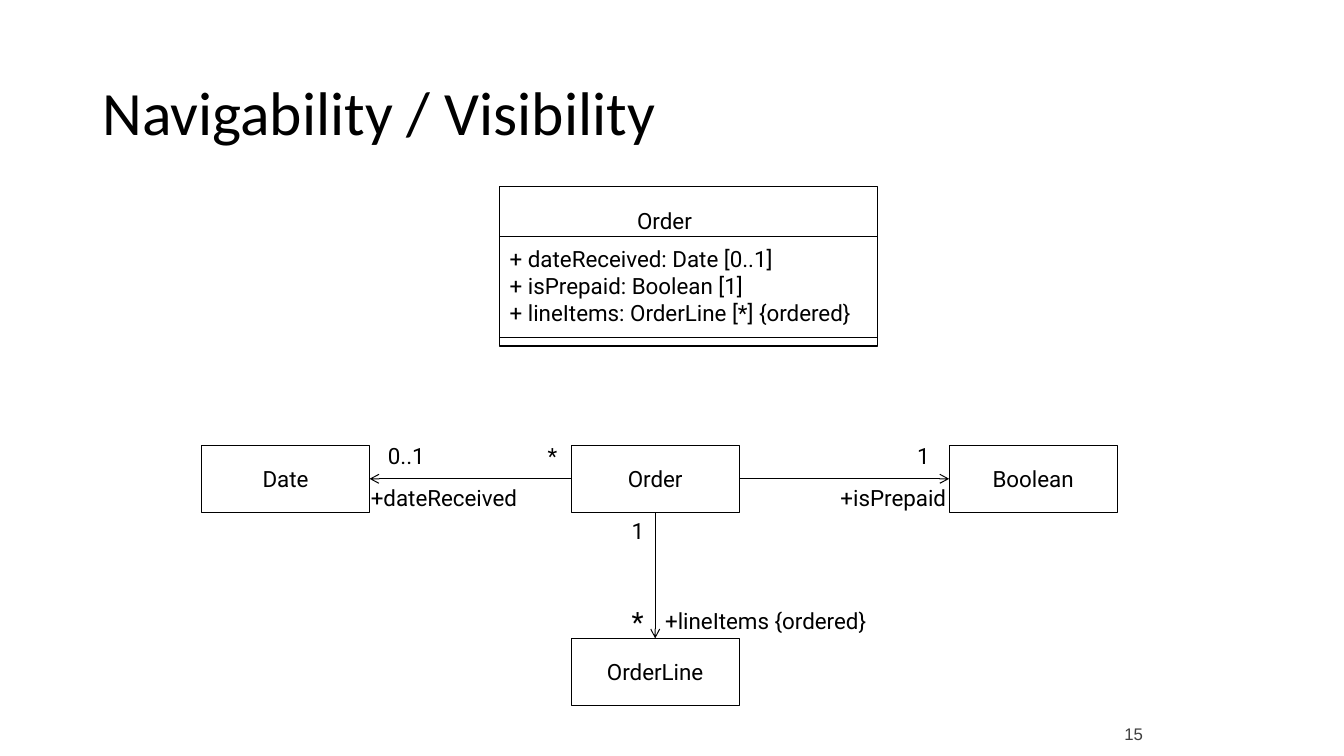
from lxml.etree import SubElement as Sub
from pptx import Presentation
from pptx.dml.color import RGBColor as Rgb
from pptx.enum.shapes import MSO_CONNECTOR as Conn, MSO_SHAPE as Kind
from pptx.enum.text import MSO_ANCHOR as Anchor, MSO_AUTO_SIZE as Fit, PP_ALIGN as Align
from pptx.oxml.ns import qn
from pptx.util import Pt

COLORS = {"ink": "000000", "page": "3F3F3F"}
TOP, LEFT, BOTTOM, RIGHT = range(4)


def style(para, size=16, face="Roboto", color="ink", align=Align.LEFT):
    para.alignment = align
    para.font.size = Pt(size)
    para.font.name = face
    para.font.color.rgb = Rgb.from_string(COLORS[color])


def ink(line):
    line.color.rgb = Rgb.from_string(COLORS["ink"])
    line.width = Pt(0.75)


def add_title(slide, text):
    title = slide.shapes.title
    title.left, title.top, title.width, title.height = Pt(66), Pt(28.8), Pt(828), Pt(108)
    frame = title.text_frame
    frame.text = text
    frame.auto_size = Fit.NONE
    frame.vertical_anchor = Anchor.MIDDLE
    para = frame.paragraphs[0]
    para.line_spacing = 0.9
    style(para, 44, "Calibri")


def add_box(slide, x, y, text, w=120, h=48, align=Align.CENTER):
    box = slide.shapes.add_shape(Kind.RECTANGLE, Pt(x), Pt(y), Pt(w), Pt(h))
    box.shadow.inherit = False
    box.fill.background()
    ink(box.line)
    frame = box.text_frame
    frame.text = text
    frame.word_wrap = True
    frame.vertical_anchor = Anchor.MIDDLE
    for para in frame.paragraphs:
        style(para, align=align)
    return box


def add_line(slide, x1, y1, x2, y2):
    line = slide.shapes.add_connector(Conn.STRAIGHT, Pt(x1), Pt(y1), Pt(x2), Pt(y2))
    ink(line.line)
    Sub(line._element.spPr, qn("a:effectLst"))
    return line


def add_arrow(slide, start, side, end, into):
    line = add_line(slide, 0, 0, 0, 0)
    line.begin_connect(start, side)
    line.end_connect(end, into)
    Sub(line.line._get_or_add_ln(), qn("a:tailEnd"), type="arrow")


def add_label(slide, x, y, w, h, text, **look):
    label = slide.shapes.add_textbox(Pt(x), Pt(y), Pt(w), Pt(h))
    frame = label.text_frame
    frame.text = text
    frame.word_wrap = False
    style(frame.paragraphs[0], **look)
    return frame


def add_class(slide):
    x, y, w = 357, 133.2, 270
    rows = ["Order", "+ dateReceived: Date [0..1]", "+ isPrepaid: Boolean [1]",
            "+ lineItems: OrderLine [*] {ordered}"]
    box = add_box(slide, x, y, "\n".join(rows), w, 114, Align.LEFT)
    name, first = box.text_frame.paragraphs[:2]
    name._p.get_or_add_pPr().set("marL", str(Pt(91)))
    first.space_before = Pt(8)
    for rule in (169.2, 241.2):
        add_line(slide, x, rule, x + w, rule)


def add_links(slide):
    order = add_box(slide, 408, 318, "Order")
    date = add_box(slide, 144, 318, "Date")
    flag = add_box(slide, 678, 318, "Boolean")
    item = add_box(slide, 408, 456, "OrderLine")
    add_arrow(slide, order, LEFT, date, RIGHT)
    add_arrow(slide, order, BOTTOM, item, TOP)
    add_arrow(slide, order, RIGHT, flag, LEFT)

    # Role names and multiplicities
    for x, y, w, text in [
        (593.3, 342, 90.7, "+isPrepaid"),
        (257.8, 342, 121.7, "+dateReceived"),
        (468, 429.8, 159.8, "+lineItems {ordered}"),
        (648, 312, 23, "1"),
        (270, 312, 41, "0..1"),
        (384, 312, 20.9, "*"),
        (444, 366, 23, "1"),
    ]:
        add_label(slide, x, y, w, 26.6, text)
    add_label(slide, 444, 428.4, 22.3, 31, "*", size=20)


def add_page(slide, text):
    frame = add_label(slide, 766, 509.8, 57.6, 21.6, text, size=12, face="Arial",
                      color="page", align=Align.RIGHT)
    frame.word_wrap = True
    frame.vertical_anchor = Anchor.BOTTOM
    frame.margin_bottom = 0


def main():
    deck = Presentation()
    deck.slide_width, deck.slide_height = Pt(960), Pt(540)
    slide = deck.slides.add_slide(deck.slide_layouts[5])
    add_title(slide, "Navigability / Visibility")
    add_page(slide, "15")
    # Class with attributes, then the same as associations
    add_class(slide)
    add_links(slide)
    deck.save("out.pptx")


if __name__ == "__main__":
    main()
